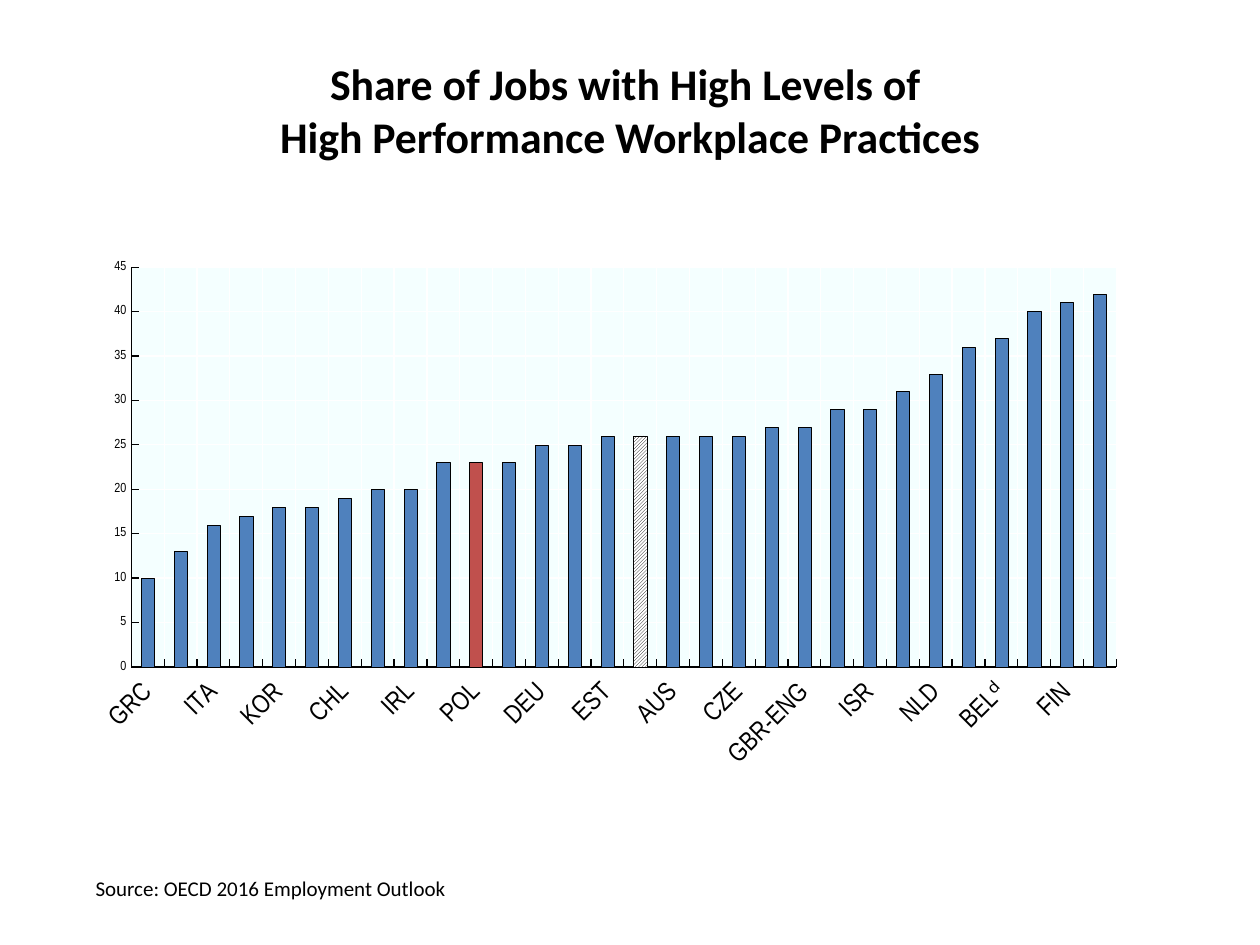
from dataclasses import dataclass

from lxml import etree
from pptx import Presentation
from pptx.chart import data
from pptx.dml.color import RGBColor
from pptx.enum import chart as charts, dml, text
from pptx.oxml import parse_xml
from pptx.oxml.ns import nsdecls, qn
from pptx.util import Pt


@dataclass(frozen=True)
class Theme:
    ink: str = "000000"
    paper: str = "FFFFFF"
    plot: str = "F4FFFF"
    bar: str = "4F81BD"
    highlight: str = "C0504D"
    body_font: str = "Calibri"
    axis_font: str = "Arial Narrow"
    title_size: float = 25
    source_size: float = 12
    chart_size: float = 10
    category_size: float = 15
    value_size: float = 7.5
    axis_width: float = 0.75
    bar_width: float = 0.25


SHARES = {
    "GRC": 10, "TUR": 13, "ITA": 16, "SVK": 17, "KOR": 18, "FRA": 18,
    "CHL": 19, "GBR-NIR": 20, "IRL": 20, "SVN": 23, "POL": 23, "ESP": 23,
    "DEU": 25, "JPN": 25, "EST": 26, "Average": 26, "AUS": 26, "NOR": 26,
    "CZE": 26, "CAN": 27, "GBR-ENG": 27, "USA": 29, "ISR": 29, "NZL": 31,
    "NLD": 33, "AUT": 36, "BELᵈ": 37, "SWE": 40, "FIN": 41, "DNK": 42,
}


class SlideBuilder:
    def __init__(self, page, theme):
        self.page = page
        self.theme = theme

    def style_font(self, font, name, size, bold=False):
        font.name, font.size, font.bold = name, Pt(size), bold
        font.color.rgb = RGBColor.from_string(self.theme.ink)

    def style_line(self, line, color, width):
        line.color.rgb = RGBColor.from_string(color)
        line.width = Pt(width)

    def add_text(self, frame, words, size, bold=False, align=None, wrap=True):
        box = self.page.shapes.add_textbox(*map(Pt, frame))
        box.text_frame.word_wrap = wrap
        box.text_frame.auto_size = text.MSO_AUTO_SIZE.SHAPE_TO_FIT_TEXT
        box.text_frame.text = words
        para = box.text_frame.paragraphs[0]
        para.alignment = align
        for span in para.runs:
            self.style_font(span.font, self.theme.body_font, size, bold)

    def add_column_chart(self, frame, values, highlight, average):
        theme = self.theme
        chart_data = data.CategoryChartData()
        chart_data.categories = list(values)
        chart_data.add_series("Series 1", list(values.values()))
        chart = self.page.shapes.add_chart(
            charts.XL_CHART_TYPE.COLUMN_CLUSTERED, *map(Pt, frame), chart_data
        ).chart
        chart.has_legend = chart.has_title = False
        self.style_font(chart.font, theme.body_font, theme.chart_size)

        # Bars, with one country and the average set apart
        plot = chart.plots[0]
        plot.gap_width = 150
        plot.vary_by_categories = False
        series = plot.series[0]
        names = list(values)
        country = series.points[names.index(highlight)]
        mean = series.points[names.index(average)]
        for part, color in ((series, theme.bar), (country, theme.highlight)):
            part.format.fill.solid()
            part.format.fill.fore_color.rgb = RGBColor.from_string(color)
        hatch = mean.format.fill
        hatch.patterned()
        hatch.pattern = dml.MSO_PATTERN.LIGHT_UPWARD_DIAGONAL
        hatch.fore_color.rgb = RGBColor.from_string(theme.ink)
        hatch.back_color.rgb = RGBColor.from_string(theme.paper)
        for part in (series, country, mean):
            self.style_line(part.format.line, theme.ink, theme.bar_width)

        self.style_axis(chart.category_axis, theme.category_size)
        self.style_axis(chart.value_axis, theme.value_size)
        chart.category_axis.tick_label_position = charts.XL_TICK_LABEL_POSITION.LOW
        chart.value_axis.minimum_scale = 0
        chart.value_axis.maximum_scale = 45
        chart.value_axis.major_unit = 5
        self.slant_labels(chart)
        self.style_plot_area(chart, x=0.045, y=0.067, w=0.919, h=0.62)

    def style_axis(self, axis, size):
        theme = self.theme
        axis.has_major_gridlines = True
        axis.major_tick_mark = charts.XL_TICK_MARK.INSIDE
        axis.minor_tick_mark = charts.XL_TICK_MARK.NONE
        axis.tick_labels.number_format = "General"
        axis.tick_labels.number_format_is_linked = False
        self.style_font(axis.tick_labels.font, theme.axis_font, size)
        self.style_line(axis.format.line, theme.ink, theme.axis_width)
        self.style_line(axis.major_gridlines.format.line, theme.paper, theme.axis_width)

    def slant_labels(self, chart):
        """Turn category labels 45 degrees and show every second one."""
        axis = chart._chartSpace.find(".//" + qn("c:catAx"))
        body = axis.find(qn("c:txPr")).find(qn("a:bodyPr"))
        body.set("rot", "-2700000")
        body.set("vert", "horz")
        skip = parse_xml(f'<c:tickLblSkip {nsdecls("c")} val="2"/>')
        axis.find(qn("c:noMultiLvlLbl")).addprevious(skip)

    def style_plot_area(self, chart, **layout):
        area = chart._chartSpace.find(".//" + qn("c:plotArea"))
        for old in area.findall(qn("c:layout")):
            area.remove(old)
        holder = parse_xml(f'<c:layout {nsdecls("c")}><c:manualLayout/></c:layout>')
        settings = {"layoutTarget": "inner", "xMode": "edge", "yMode": "edge", **layout}
        for name, value in settings.items():
            etree.SubElement(holder[0], qn(f"c:{name}")).set("val", str(value))
        area.insert(0, holder)
        area.append(parse_xml(
            f'<c:spPr {nsdecls("c", "a")}><a:solidFill>'
            f'<a:srgbClr val="{self.theme.plot}"/></a:solidFill>'
            f'<a:ln><a:noFill/></a:ln></c:spPr>'
        ))


def main():
    deck = Presentation()
    deck.slide_width, deck.slide_height = Pt(720), Pt(540)
    theme = Theme()
    builder = SlideBuilder(deck.slides.add_slide(deck.slide_layouts[6]), theme)

    # Title
    builder.add_text(
        (150.5, 29, 419, 67.5),
        "Share of Jobs with High Levels of \vHigh Performance Workplace Practices",
        theme.title_size, bold=True, align=text.PP_ALIGN.CENTER, wrap=False,
    )

    # Source line
    builder.add_text(
        (47.5, 497, 663, 21.5), "Source: OECD 2016 Employment Outlook", theme.source_size
    )

    # Shares by country
    builder.add_column_chart(
        (47.5, 128, 612.5, 368.5), SHARES, highlight="POL", average="Average"
    )

    deck.save("out.pptx")


if __name__ == "__main__":
    main()
